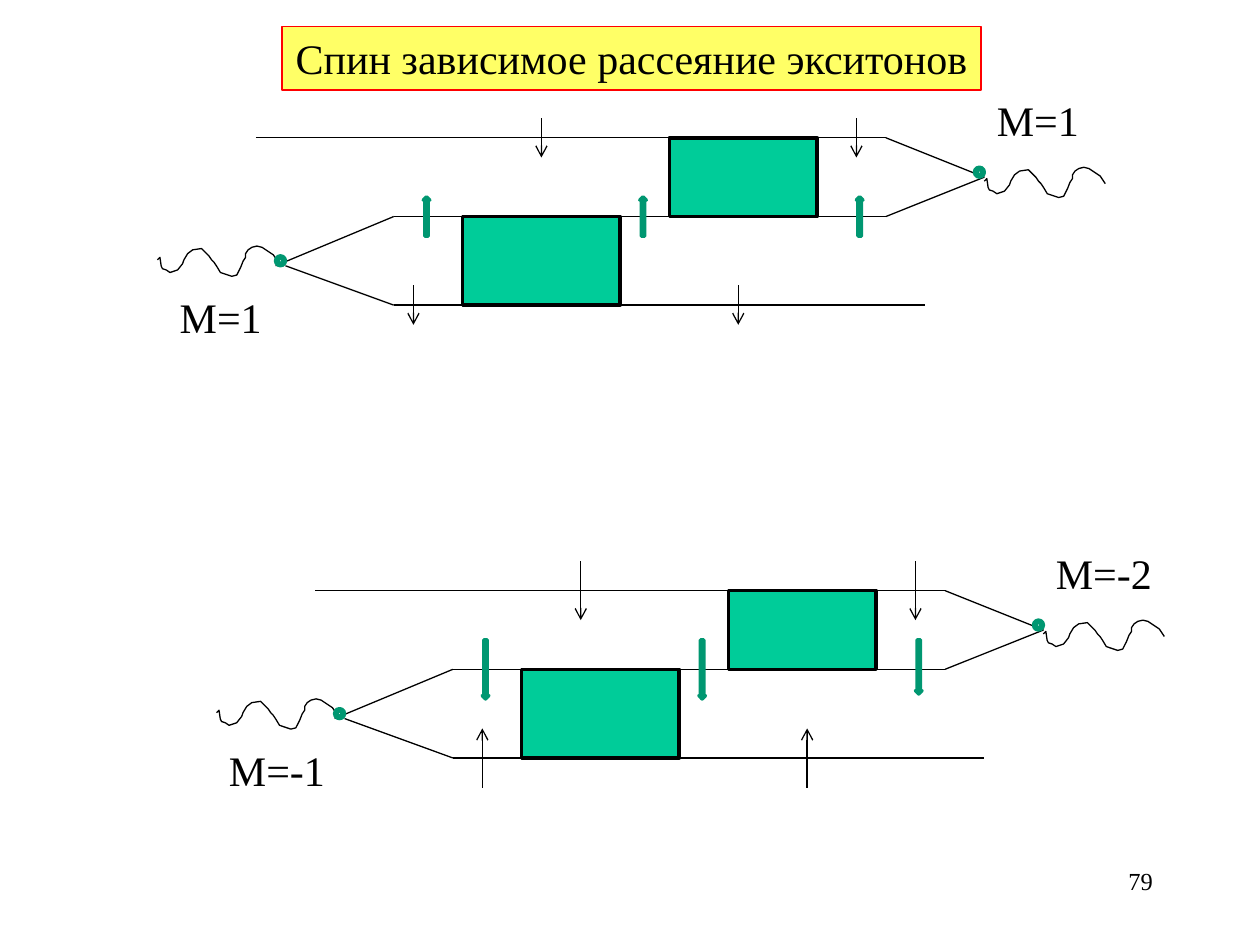
"""Build the slide on spin dependent scattering of excitons."""
from lxml import etree
from pptx import Presentation
from pptx.dml.color import RGBColor
from pptx.enum.shapes import MSO_CONNECTOR, MSO_SHAPE
from pptx.enum.text import MSO_ANCHOR, MSO_AUTO_SIZE, PP_ALIGN
from pptx.oxml.ns import qn
from pptx.util import Inches, Pt

STRAIGHT = MSO_CONNECTOR.STRAIGHT
RECTANGLE, DONUT = MSO_SHAPE.RECTANGLE, MSO_SHAPE.DONUT
UP_ARROW, DOWN_ARROW = MSO_SHAPE.UP_ARROW, MSO_SHAPE.DOWN_ARROW
TOP, NO_FIT = MSO_ANCHOR.TOP, MSO_AUTO_SIZE.NONE
LEFT, CENTER, RIGHT = PP_ALIGN.LEFT, PP_ALIGN.CENTER, PP_ALIGN.RIGHT

WIDTH, HEIGHT = Inches(10), Inches(7.5)
COLUMNS, ROWS = 64, 48
FONT = "Times New Roman"
BLACK, GREEN, DARK_GREEN = "000000", "00CC99", "009771"
YELLOW, RED = "FFFF66", "FF0000"
HUNDREDTH = Inches(0.01)
THIN, THICK = 0.75, 2

WAVE = [(96, 13), (92, 7), (86, 3), (83, 1), (79, 0), (75, 1), (72, 3), (70, 6),
        (70, 9), (68, 12), (66, 17), (63, 23), (59, 24), (53, 22), (50, 21),
        (47, 16), (45, 13), (43, 11), (41, 8), (35, 2), (28, 3), (24, 6),
        (21, 11), (20, 14), (16, 19), (10, 21), (7, 19), (4, 18), (3, 16),
        (2, 9), (0, 11)]
PROPAGATORS = [(14, 13.5, 20, 11), (14.5, 13.5, 20, 15.5), (13, 7, 45, 7),
               (20, 11, 45, 11), (20, 15.5, 47, 15.5), (50, 9, 45, 7),
               (50, 9, 45, 11)]
SCATTERING_BOXES = [(23.5, 11, 8, 4.5), (34, 7, 7.5, 4)]
VERTICES = [(14, 13), (49.5, 8.5)]
PHOTONS = [(8, 12.5), (50, 8.5)]
HOLE_COLUMNS = (21.5, 32.5, 43.5)

DIAGRAMS = [
    dict(origin=(0, 0), hole_arrow=UP_ARROW, hole_top=10, hole_heights=(2, 2, 2),
         spins=[(27.5, 6, 8), (43.5, 6, 8), (21, 14.5, 16.5), (37.5, 14.5, 16.5)],
         labels=[("M=1", 8.5, 14.5, 5.5), ("M=1", 50, 4.5, 5.5)]),
    dict(origin=(3, 23), hole_arrow=DOWN_ARROW, hole_top=9.5, hole_heights=(3, 3, 2.75),
         spins=[(26.5, 5.5, 8.5), (43.5, 5.5, 8.5), (21.5, 17, 14), (38, 17, 14)],
         labels=[("M=-1", 8, 14.5, 6.2), ("M=-2", 50, 4.5, 6.2)]),
]


def color(value):
    """Turn a hex string into a colour."""
    return RGBColor.from_string(value)


class DiagramSlide:
    """Draw styled elements on a slide, placed on a grid with a movable origin."""

    def __init__(self, slide):
        self.shapes = slide.shapes
        self.origin = (0, 0)

    def x(self, column):
        return round((self.origin[0] + column) * WIDTH / COLUMNS)

    def y(self, row):
        return round((self.origin[1] + row) * HEIGHT / ROWS)

    def area(self, left, top, width, height):
        x, y = self.x(left), self.y(top)
        return x, y, self.x(left + width) - x, self.y(top + height) - y

    def outline(self, shape, line_color, width):
        shape.line.color.rgb = color(line_color)
        shape.line.width = Pt(width)

    def shape(self, kind, area, line_color):
        shape = self.shapes.add_shape(kind, *self.area(*area))
        shape.shadow.inherit = False
        shape.fill.solid()
        shape.fill.fore_color.rgb = color(GREEN)
        self.outline(shape, line_color, THICK)

    def line(self, start_column, start_row, end_column, end_row, arrow=False):
        connector = self.shapes.add_connector(
            STRAIGHT, self.x(start_column), self.y(start_row),
            self.x(end_column), self.y(end_row))
        self.outline(connector, BLACK, THIN)
        properties = connector.element.spPr
        if arrow:
            etree.SubElement(properties.find(qn("a:ln")), qn("a:tailEnd"), type="arrow")
        etree.SubElement(properties, qn("a:effectLst"))

    def photon(self, left, top):
        builder = self.shapes.build_freeform(*WAVE[0], scale=HUNDREDTH)
        builder.add_line_segments(WAVE[1:], close=False)
        wave = builder.convert_to_shape(self.x(left), self.y(top))
        wave.shadow.inherit = False
        wave.fill.background()
        self.outline(wave, BLACK, THIN)

    def set_text(self, shape, text, size, alignment, wrap=False):
        frame = shape.text_frame
        frame.text = text
        frame.word_wrap = wrap
        frame.auto_size = NO_FIT
        frame.vertical_anchor = TOP
        paragraph = frame.paragraphs[0]
        paragraph.alignment = alignment
        font = paragraph.runs[0].font
        font.name, font.size = FONT, Pt(size)
        font.color.rgb = color(BLACK)

    def text(self, text, area, size=24, alignment=LEFT, wrap=False):
        box = self.shapes.add_textbox(*self.area(*area))
        self.set_text(box, text, size, alignment, wrap)

    def title(self, text, area):
        title = self.shapes.title
        title.left, title.top, title.width, title.height = self.area(*area)
        title.fill.solid()
        title.fill.fore_color.rgb = color(YELLOW)
        self.outline(title, RED, THIN)
        self.set_text(title, text, 24, CENTER)

    def diagram(self, origin, hole_arrow, hole_top, hole_heights, spins, labels):
        self.origin = origin
        for propagator in PROPAGATORS:
            self.line(*propagator)
        for box in SCATTERING_BOXES:
            self.shape(RECTANGLE, box, BLACK)
        for photon in PHOTONS:
            self.photon(*photon)
        for vertex in VERTICES:
            self.shape(DONUT, (*vertex, 0.5, 0.5), DARK_GREEN)
        for column, height in zip(HOLE_COLUMNS, hole_heights):
            self.shape(hole_arrow, (column, hole_top, 0.33, height), DARK_GREEN)
        for column, start, end in spins:
            self.line(column, start, column, end, arrow=True)
        for text, column, row, width in labels:
            self.text(text, (column, row, width, 3.25))
        self.origin = (0, 0)


def main():
    presentation = Presentation()
    presentation.slide_width, presentation.slide_height = WIDTH, HEIGHT
    layout = presentation.slide_layouts.get_by_name("Title Only")
    page = DiagramSlide(presentation.slides.add_slide(layout))
    page.title("Спин зависимое рассеяние экситонов", (14.33, 1.33, 35.5, 3.25))
    for diagram in DIAGRAMS:
        page.diagram(**diagram)
    page.text("79", (45.9, 43.7, 13.3, 3.2), size=14, alignment=RIGHT, wrap=True)
    presentation.save("out.pptx")


if __name__ == "__main__":
    main()
